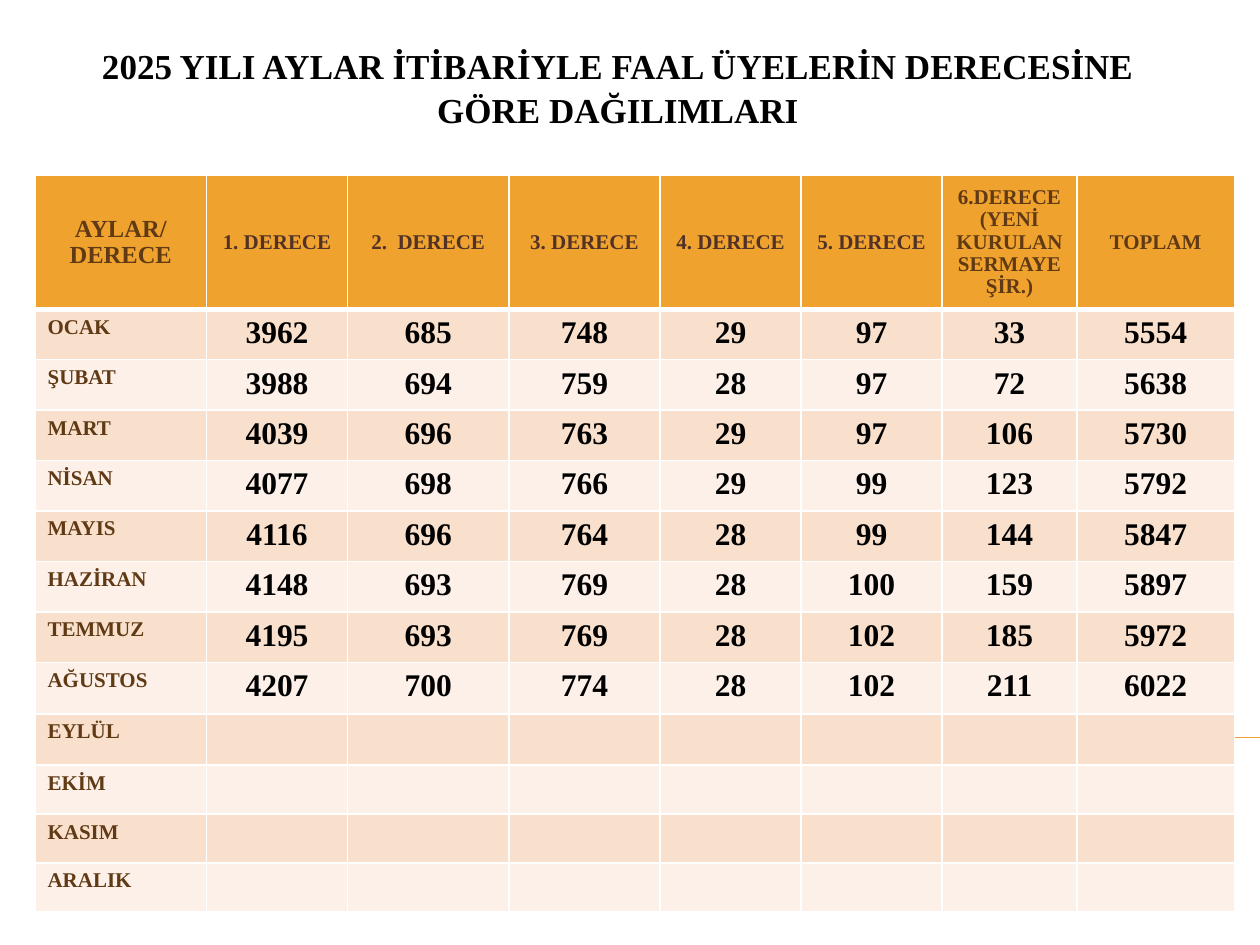
import pptx
import pptx.dml.color
import pptx.enum.shapes
import pptx.enum.text
import pptx.oxml.ns
import pptx.util
from lxml import etree

Pt = pptx.util.Pt
ALIGN = pptx.enum.text.PP_ALIGN
ANCHOR = pptx.enum.text.MSO_ANCHOR

ORANGE, BROWN, DARK_BROWN = "F0A22E", "603A14", "523227"
BLACK, WHITE = "000000", "FFFFFF"
BANDS = ("F9E0CD", "FCF0E8")

TITLE = "2025 YILI AYLAR İTİBARİYLE FAAL ÜYELERİN DERECESİNE GÖRE DAĞILIMLARI"
HEADERS = ["AYLAR/ DERECE", "1. DERECE", "2.  DERECE", "3. DERECE", "4. DERECE",
           "5. DERECE", "6.DERECE (YENİ KURULAN SERMAYE ŞİR.)", "TOPLAM"]
MONTHS = {
    "OCAK": (3962, 685, 748, 29, 97, 33, 5554),
    "ŞUBAT": (3988, 694, 759, 28, 97, 72, 5638),
    "MART": (4039, 696, 763, 29, 97, 106, 5730),
    "NİSAN": (4077, 698, 766, 29, 99, 123, 5792),
    "MAYIS": (4116, 696, 764, 28, 99, 144, 5847),
    "HAZİRAN": (4148, 693, 769, 28, 100, 159, 5897),
    "TEMMUZ": (4195, 693, 769, 28, 102, 185, 5972),
    "AĞUSTOS": (4207, 700, 774, 28, 102, 211, 6022),
    "EYLÜL": (), "EKİM": (), "KASIM": (), "ARALIK": (),
}
COLUMN_WIDTHS = [98, 80.6, 92.2, 86.4, 80.6, 80.6, 77, 90]
HEADER_HEIGHT, MONTH_HEIGHT, TALL_HEIGHT = 76, 27.9, 29.4
TALL_MONTHS = ("AĞUSTOS", "EYLÜL")


def color(value):
    return pptx.dml.color.RGBColor.from_string(value)


def write(para, text, size, ink, align=ALIGN.CENTER, spacing=1.0):
    for name, value in {"alignment": align, "line_spacing": spacing}.items():
        setattr(para, name, value)
    span = para.add_run()
    span.text = text
    span.font.color.rgb = color(ink)
    for name, value in {"name": "Times New Roman", "size": Pt(size), "bold": True}.items():
        setattr(span.font, name, value)


def set_borders(cell, **widths):
    properties = cell._tc.get_or_add_tcPr()
    fill = properties[0]
    for side in ("L", "R", "T", "B"):
        border = etree.Element(pptx.oxml.ns.qn(f"a:ln{side}"), w=str(Pt(widths.get(side, 1))))
        solid = etree.SubElement(border, pptx.oxml.ns.qn("a:solidFill"))
        etree.SubElement(solid, pptx.oxml.ns.qn("a:srgbClr"), val=WHITE)
        fill.addprevious(border)


def paint(cell, fill, **widths):
    cell.fill.solid()
    cell.fill.fore_color.rgb = color(fill)
    set_borders(cell, **widths)


def add_rule(page, left, top, width):
    line = page.shapes.add_connector(pptx.enum.shapes.MSO_CONNECTOR.STRAIGHT,
                                     Pt(left), Pt(top), Pt(left + width), Pt(top))
    line.line.color.rgb = color(ORANGE)
    line.line.width = Pt(0.75)
    etree.SubElement(line._element.spPr, pptx.oxml.ns.qn("a:effectLst"))


def add_title(page, left, top, width, height):
    box = page.shapes.add_textbox(Pt(left), Pt(top), Pt(width), Pt(height))
    box.text_frame.word_wrap = True
    write(box.text_frame.paragraphs[0], TITLE, 20, BLACK, spacing=1.04)


def add_month_table(page, left, top):
    heights = [HEADER_HEIGHT] + [TALL_HEIGHT if month in TALL_MONTHS else MONTH_HEIGHT
                                 for month in MONTHS]
    table = page.shapes.add_table(len(heights), len(COLUMN_WIDTHS), Pt(left), Pt(top),
                                  Pt(sum(COLUMN_WIDTHS)), Pt(sum(heights))).table
    for column, width in zip(table.columns, COLUMN_WIDTHS):
        column.width = Pt(width)
    for row, height in zip(table.rows, heights):
        row.height = Pt(height)

    # Header row
    for index, label in enumerate(HEADERS):
        cell = table.cell(0, index)
        paint(cell, ORANGE, B=3)
        cell.vertical_anchor = ANCHOR.MIDDLE
        write(cell.text_frame.paragraphs[0], label, 14 if index == 0 else 12,
              DARK_BROWN if 1 <= index <= 5 else BROWN, spacing=0.96)

    # Month rows, with blank figures for months still to come
    for number, (month, figures) in enumerate(MONTHS.items(), 1):
        for index in range(len(HEADERS)):
            cell = table.cell(number, index)
            paint(cell, BANDS[(number - 1) % 2], T=3 if number == 1 else 1)
            para = cell.text_frame.paragraphs[0]
            if index == 0:
                write(para, month, 12, BROWN, ALIGN.LEFT)
            elif figures:
                write(para, str(figures[index - 1]), 18, BLACK)
            else:
                para._p.get_or_add_endParaRPr().set("sz", "1200")


def main():
    deck = pptx.Presentation()
    deck.slide_width, deck.slide_height = Pt(720), Pt(540)
    page = deck.slides.add_slide(deck.slide_layouts[6])
    add_rule(page, 40, 421.4, 680)
    add_title(page, 20, 21, 666, 45)
    add_month_table(page, 20, 100.3)
    deck.save("out.pptx")


if __name__ == "__main__":
    main()
